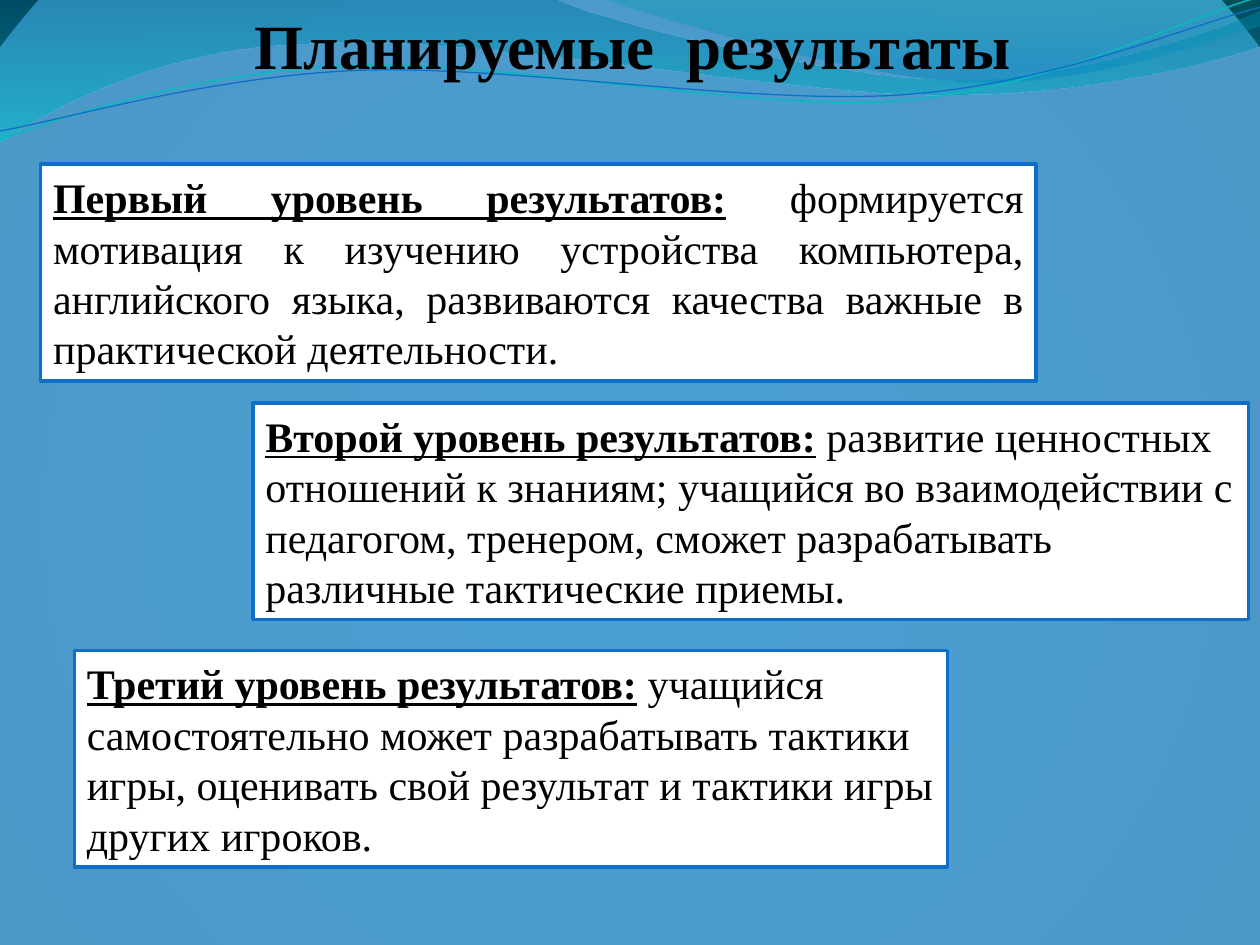
import dataclasses

import lxml.etree
import pptx
import pptx.dml.color
import pptx.enum.shapes
import pptx.enum.text
import pptx.oxml
import pptx.oxml.ns
import pptx.util

Cm = pptx.util.Cm
Pt = pptx.util.Pt
qn = pptx.oxml.ns.qn


@dataclasses.dataclass(frozen=True)
class Theme:
    font: str = "Times New Roman"
    title_size: float = 36
    body_size: float = 24
    text: str = "000000"
    panel: str = "FFFFFF"
    accent: str = "0F6FC6"
    teal: str = "0AB8BF"
    backdrop: tuple = ((0, "4AA0D6", 100), (100, "4C98C7", 100), (100, "002C38", 100))
    wide_wave: tuple = ((0, "0074A1", 45), (100, "00C6CF", 55))
    right_wave: tuple = ((0, "00A1A9", 30), (80, "008BBF", 45))


THEME = Theme()
GLOW = '<a:path path="circle"><a:fillToRect l="10000" t="110000" r="10000" b="100000"/></a:path>'
DOWNWARD = '<a:lin ang="5400000" scaled="1"/>'
UNITS_PER_CM = 1000

WIDE_WAVE = [
    [(0, 0)], [(11.18, -0.03)],
    [(12.09, 0.43), (16.87, 1.6), (19.25, 1.6)],
    [(21.67, 1.6), (24.33, 0.66), (25.4, 0.23)],
    [(25.43, 0.91)],
    [(24.97, 1.12), (22.1, 1.93), (18.95, 1.91)],
    [(15.8, 1.91), (9.7, 0.71), (6.53, 0.86)],
    [(3.28, 0.91), (1.17, 2.11), (-0.03, 2.87)],
]
RIGHT_WAVE = [
    [(12.17, -0.03)],
    [(12.93, 0.28), (17.32, 1.57), (19.53, 1.65)],
    [(21.74, 1.75), (24.41, 0.81), (25.4, 0.53)],
    [(25.4, 0)],
]
TEAL_LINE = [
    [(0, 2.82)],
    [(1.22, 2.36), (4.01, 1.45), (7.04, 1.32)],
    [(10.03, 1.19), (15.06, 2.26), (18.11, 2.03)],
    [(21.16, 1.8), (23.83, 0.38), (25.35, -0.05)],
]
BLUE_LINE = [
    [(0, 2.64)],
    [(1.19, 2.44), (4.17, 1.55), (7.19, 1.42)],
    [(10.24, 1.3), (15.16, 2.13), (18.21, 1.91)],
    [(21.23, 1.7), (23.88, 0.53), (25.4, 0.15)],
]

LEVELS = [
    ((0.82, 3.31, 20.07, 4.37), "JUSTIFY", "Первый уровень результатов:",
     "формируется мотивация к изучению устройства компьютера, английского языка, "
     "развиваются качества важные в практической деятельности."),
    ((5.1, 8.12, 20.07, 4.37), "LEFT", "Второй уровень результатов:",
     "развитие ценностных отношений к знаниям; учащийся во взаимодействии с педагогом, "
     "тренером, сможет разрабатывать различные тактические приемы."),
    ((1.5, 13.11, 17.6, 4.37), "LEFT", "Третий уровень результатов:",
     "учащийся самостоятельно может разрабатывать тактики игры, оценивать свой результат "
     "и тактики игры других игроков."),
]


def rgb(value):
    return pptx.dml.color.RGBColor.from_string(value)


def gradient(stops, direction):
    marks = "".join(
        f'<a:gs pos="{position * 1000}"><a:srgbClr val="{color}">'
        f'<a:alpha val="{alpha * 1000}"/></a:srgbClr></a:gs>'
        for position, color, alpha in stops)
    return pptx.oxml.parse_xml(
        f'<a:gradFill {pptx.oxml.ns.nsdecls("a")} rotWithShape="1">'
        f'<a:gsLst>{marks}</a:gsLst>{direction}</a:gradFill>')


def paint_backdrop(page):
    page.background.fill.solid()
    properties = page._element.find(".//" + qn("p:bgPr"))
    properties.replace(properties.find(qn("a:solidFill")), gradient(THEME.backdrop, GLOW))


def bend(shape, segments):
    unit = Cm(1) / UNITS_PER_CM
    lines = list(shape._element.iter(qn("a:lnTo")))
    for line, segment in zip(lines, segments):
        if len(segment) == 1:
            continue
        line.tag = qn("a:cubicBezTo")
        for point in list(line):
            line.remove(point)
        for x, y in segment:
            lxml.etree.SubElement(line, qn("a:pt"), {
                "x": str(round((Cm(x) - shape.left) / unit)),
                "y": str(round((Cm(y) - shape.top) / unit))})


def add_outline(page, outline, close):
    knots = [tuple(value * UNITS_PER_CM for value in segment[-1]) for segment in outline]
    builder = page.shapes.build_freeform(*knots[0], scale=Cm(1) / UNITS_PER_CM)
    builder.add_line_segments(knots[1:], close=close)
    shape = builder.convert_to_shape()
    bend(shape, outline[1:])
    shape.shadow.inherit = False
    shape.fill.background()
    return shape


def add_waves(page):
    for outline, stops in ((WIDE_WAVE, THEME.wide_wave), (RIGHT_WAVE, THEME.right_wave)):
        wave = add_outline(page, outline, True)
        wave.line.fill.background()
        properties = wave._element.spPr
        properties.replace(properties.find(qn("a:noFill")), gradient(stops, DOWNWARD))
    for outline, color, width in ((TEAL_LINE, THEME.teal, 0.85), (BLUE_LINE, THEME.accent, 0.75)):
        curve = add_outline(page, outline, False)
        curve.line.color.rgb = rgb(color)
        curve.line.width = Pt(width)


def place(shape, box):
    shape.left, shape.top, shape.width, shape.height = map(Cm, box)


def add_span(para, text, size, bold=False, underline=False):
    span = para.add_run()
    span.text = text
    span.font.name = THEME.font
    span.font.size = Pt(size)
    span.font.bold = bold
    span.font.underline = underline
    span.font.color.rgb = rgb(THEME.text)


def add_title(page, box, text):
    title = page.shapes.title
    page.shapes._spTree.append(title._element)
    place(title, box)
    frame = title.text_frame
    frame.margin_left, frame.margin_right = 0, Cm(0.17)
    frame.margin_top = Cm(0.13)
    frame.word_wrap = True
    frame.auto_size = pptx.enum.text.MSO_AUTO_SIZE.NONE
    frame.vertical_anchor = pptx.enum.text.MSO_ANCHOR.TOP
    para = frame.paragraphs[0]
    para.alignment = pptx.enum.text.PP_ALIGN.CENTER
    add_span(para, text, THEME.title_size, bold=True)


def add_level(page, box, alignment, heading, text):
    panel = page.shapes.add_shape(pptx.enum.shapes.MSO_SHAPE.RECTANGLE, *map(Cm, box))
    panel.shadow.inherit = False
    panel.fill.solid()
    panel.fill.fore_color.rgb = rgb(THEME.panel)
    panel.line.color.rgb = rgb(THEME.accent)
    panel.line.width = Pt(2)
    frame = panel.text_frame
    frame.word_wrap = True
    frame.auto_size = pptx.enum.text.MSO_AUTO_SIZE.SHAPE_TO_FIT_TEXT
    frame.vertical_anchor = pptx.enum.text.MSO_ANCHOR.MIDDLE
    para = frame.paragraphs[0]
    para.alignment = pptx.enum.text.PP_ALIGN[alignment]
    add_span(para, heading, THEME.body_size, bold=True, underline=True)
    add_span(para, " ", THEME.body_size, bold=True)
    add_span(para, text, THEME.body_size)


def main():
    deck = pptx.Presentation()
    deck.slide_width, deck.slide_height = Cm(25.4), Cm(19.05)
    page = deck.slides.add_slide(deck.slide_layouts[5])
    paint_backdrop(page)
    add_waves(page)
    add_title(page, (0.3, 0, 25.1, 4.06), "Планируемые  результаты")
    for level in LEVELS:
        add_level(page, *level)
    deck.save("out.pptx")


if __name__ == "__main__":
    main()
